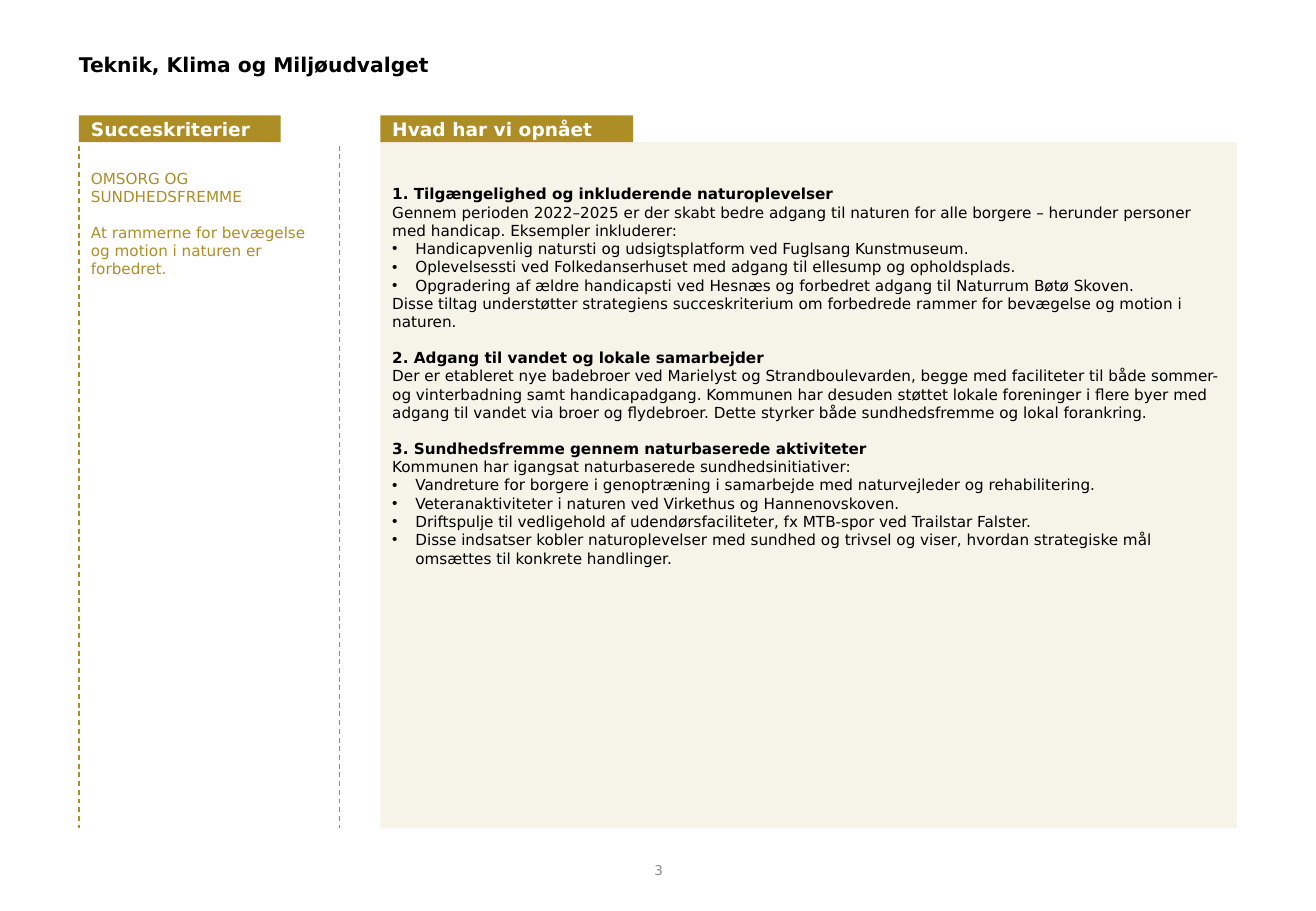
from dataclasses import dataclass

from lxml import etree
from pptx import Presentation
from pptx import util as u
from pptx.dml.color import RGBColor
from pptx.enum import dml, shapes, text
from pptx.oxml.ns import qn


@dataclass(frozen=True)
class Theme:
    """Hold the font, colours and type sizes."""
    font: str = "DejaVu Sans"
    gold: str = "AD8E26"
    black: str = "000000"
    white: str = "FFFFFF"
    grey: str = "8C8C8C"
    title: float = 12
    header: float = 11
    body: float = 9
    number: float = 8
    gap: float = 10.5


T = Theme()
WIDTH, HEIGHT = u.Inches(10.83), u.Inches(7.5)
LEFT, DIVIDER, RIGHT = 6, 25.8, 28.9
HEADER_TOP, PANEL_TOP, BOTTOM = 12.67, 15.6, 90.93

CRITERIA = [
    "OMSORG OG SUNDHEDSFREMME",
    "At rammerne for bevægelse og motion i naturen er forbedret.",
]
RESULTS = [
    ("head", "1. Tilgængelighed og inkluderende naturoplevelser"),
    ("text", "Gennem perioden 2022–2025 er der skabt bedre adgang til naturen for alle borgere – "
             "herunder personer med handicap. Eksempler inkluderer:"),
    ("bullet", "Handicapvenlig natursti og udsigtsplatform ved Fuglsang Kunstmuseum."),
    ("bullet", "Oplevelsessti ved Folkedanserhuset med adgang til ellesump og opholdsplads."),
    ("bullet", "Opgradering af ældre handicapsti ved Hesnæs og forbedret adgang til "
               "Naturrum Bøtø Skoven."),
    ("text", "Disse tiltag understøtter strategiens succeskriterium om forbedrede rammer for "
             "bevægelse og motion i naturen."),
    ("head", "2. Adgang til vandet og lokale samarbejder"),
    ("text", "Der er etableret nye badebroer ved Marielyst og Strandboulevarden, begge med "
             "faciliteter til både sommer- og vinterbadning samt handicapadgang. Kommunen har "
             "desuden støttet lokale foreninger i flere byer med adgang til vandet via broer og "
             "flydebroer. Dette styrker både sundhedsfremme og lokal forankring."),
    ("head", "3. Sundhedsfremme gennem naturbaserede aktiviteter"),
    ("text", "Kommunen har igangsat naturbaserede sundhedsinitiativer:"),
    ("bullet", "Vandreture for borgere i genoptræning i samarbejde med naturvejleder og "
               "rehabilitering."),
    ("bullet", "Veteranaktiviteter i naturen ved Virkethus og Hannenovskoven."),
    ("bullet", "Driftspulje til vedligehold af udendørsfaciliteter, fx MTB-spor ved "
               "Trailstar Falster."),
    ("bullet", "Disse indsatser kobler naturoplevelser med sundhed og trivsel og viser, hvordan "
               "strategiske mål omsættes til konkrete handlinger."),
]


def x(share):
    """Turn a percentage of the slide width into a length."""
    return round(WIDTH * share / 100)


def y(share):
    """Turn a percentage of the slide height into a length."""
    return round(HEIGHT * share / 100)


def add_box(s, left, top, width, height, fill=None, alpha=None):
    """Add a text box, or a filled rectangle, placed by slide shares."""
    area = x(left), y(top), x(width), y(height)
    if fill is None:
        return s.shapes.add_textbox(*area)
    sp = s.shapes.add_shape(shapes.MSO_SHAPE.RECTANGLE, *area)
    sp.shadow.inherit = False
    sp.line.fill.background()
    sp.fill.solid()
    sp.fill.fore_color.rgb = RGBColor.from_string(fill)
    if alpha is not None:
        color = sp.fill._xPr.find(qn("a:solidFill"))[0]
        etree.SubElement(color, qn("a:alpha"), val=str(alpha * 1000))
    return sp


def set_frame(sp, inset=0.1, top=0.05, anchor=text.MSO_ANCHOR.TOP):
    """Set wrapping, insets in inches and the anchor of a shape's text."""
    tf = sp.text_frame
    tf.word_wrap = True
    tf.margin_left = tf.margin_right = u.Inches(inset)
    tf.margin_top, tf.margin_bottom = u.Inches(top), u.Inches(0.05)
    tf.vertical_anchor = anchor
    return tf


def write(tf, words, size=T.body, color=T.black, bold=False, align=text.PP_ALIGN.LEFT,
          bullet=False, gap=0):
    """Append one formatted paragraph to a text frame."""
    first = not tf.text
    p = tf.paragraphs[0] if first else tf.add_paragraph()
    p.alignment = align
    if not first:
        p.space_before = u.Pt(gap)
    if bullet:
        pPr = p._p.get_or_add_pPr()
        indent = u.Inches(0.19)
        pPr.set("marL", str(indent))
        pPr.set("indent", str(-indent))
        etree.SubElement(pPr, qn("a:buFont"), typeface="Arial")
        etree.SubElement(pPr, qn("a:buChar"), char="•")
    r = p.add_run()
    r.text = words
    r.font.name, r.font.size, r.font.bold = T.font, u.Pt(size), bold
    r.font.color.rgb = RGBColor.from_string(color)


def add_header(s, words, left, width):
    """Add a gold column header."""
    sp = add_box(s, left, HEADER_TOP, width, PANEL_TOP - HEADER_TOP, fill=T.gold)
    tf = set_frame(sp, anchor=text.MSO_ANCHOR.MIDDLE)
    write(tf, words, size=T.header, color=T.white, bold=True)


def add_divider(s, left):
    """Add a dashed vertical line beside the criteria."""
    line = s.shapes.add_connector(shapes.MSO_CONNECTOR.STRAIGHT,
                                  x(left), y(16), x(left), y(BOTTOM))
    line.line.color.rgb = RGBColor.from_string(T.gold)
    line.line.width = u.Pt(0.75)
    line.line.dash_style = dml.MSO_LINE.DASH
    etree.SubElement(line._element.spPr, qn("a:effectLst"))


def add_criteria(s):
    """Add the column of success criteria."""
    tf = set_frame(add_box(s, LEFT, 15.87, DIVIDER - LEFT, 74.8), top=0.2)
    for words in CRITERIA:
        write(tf, words, color=T.gold, gap=T.gap)


def add_results(s):
    """Add the tinted panel of results."""
    sp = add_box(s, RIGHT, PANEL_TOP, 65.1, BOTTOM - PANEL_TOP, fill=T.gold, alpha=10)
    tf = set_frame(sp, top=0.35)
    for kind, words in RESULTS:
        head = kind == "head"
        write(tf, words, bold=head, bullet=kind == "bullet", gap=T.gap if head else 0)


def main():
    """Build and save the slide."""
    prs = Presentation()
    prs.slide_width, prs.slide_height = WIDTH, HEIGHT
    s = prs.slides.add_slide(prs.slide_layouts[6])
    title = set_frame(add_box(s, LEFT, 5.6, 60.8, 2.8), inset=0, top=0.01)
    write(title, "Teknik, Klima og Miljøudvalget", size=T.title, bold=True)
    for left in (LEFT, DIVIDER):
        add_divider(s, left)
    add_header(s, "Succeskriterier", LEFT, 15.33)
    add_header(s, "Hvad har vi opnået", RIGHT, 19.21)
    add_criteria(s)
    add_results(s)
    number = set_frame(add_box(s, 38.8, 92.8, 22.5, 5.33), anchor=text.MSO_ANCHOR.MIDDLE)
    write(number, "3", size=T.number, color=T.grey, align=text.PP_ALIGN.CENTER)
    prs.save("out.pptx")


if __name__ == "__main__":
    main()
